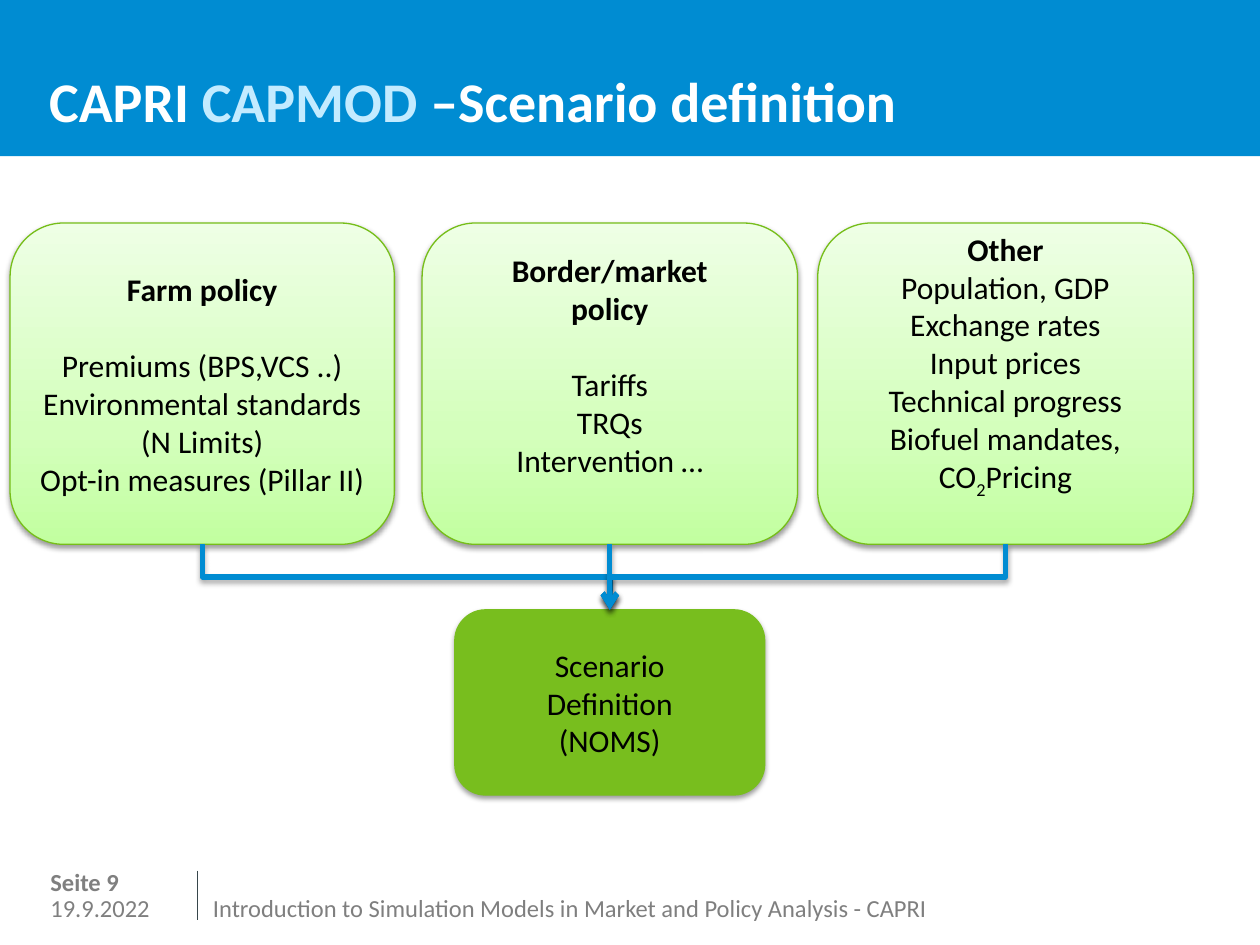
from lxml import etree
from pptx import Presentation
from pptx.dml.color import RGBColor
from pptx.enum.shapes import MSO_CONNECTOR, MSO_SHAPE
from pptx.enum.text import MSO_ANCHOR, PP_ALIGN
from pptx.oxml import parse_xml
from pptx.oxml.ns import nsdecls, qn
from pptx.util import Inches, Pt

ELBOW, STRAIGHT = MSO_CONNECTOR.ELBOW, MSO_CONNECTOR.STRAIGHT
RECT, ROUNDED = MSO_SHAPE.RECTANGLE, MSO_SHAPE.ROUNDED_RECTANGLE
TOP, MIDDLE, BOTTOM = MSO_ANCHOR.TOP, MSO_ANCHOR.MIDDLE, MSO_ANCHOR.BOTTOM
CENTER = PP_ALIGN.CENTER

THEME = {
    "font": "Calibri", "title": 32, "body": 18, "footer": 14,
    "blue": "008CD2", "pale_blue": "C3EBFF", "white": "FFFFFF", "black": "000000",
    "gray": "7F7F7F", "rule": "37464B", "green": "78BE1E", "edge": "76BE19",
    "gradient": [(0, "C2FFA0"), (35, "D4FFBC"), (100, "EEFFE5")],
}

# Content
TITLE = [("CAPRI ", "white"), ("CAPMOD", "pale_blue"), (" –Scenario definition", "white")]
# left, width, gap after heading (pt), bottom inset, heading, lines
POLICIES = [
    (0.08, 3.05, 22, 0.05, "Farm policy",
     ["Premiums (BPS,VCS ..)", "Environmental standards (N Limits)",
      "Opt-in measures (Pillar II)"]),
    (3.35, 2.98, 22, 0.35, "Border/market\vpolicy",
     ["Tariffs", "TRQs", "Intervention …"]),
    (6.49, 2.98, 0, 0.35, "Other",
     ["Population, GDP", "Exchange rates", "Input prices", "Technical progress",
      "Biofuel mandates, CO|2|Pricing"]),  # bars enclose a subscript
]
SCENARIO = ["Scenario", "Definition", "(NOMS)"]
FOOTER = [  # left, top, width, height, text, bold
    (0.4, 7.09, 1.06, 0.28, "19.9.2022", False),
    (0.4, 6.88, 1.06, 0.2, "Seite 9", True),
    (1.69, 7.09, 6.63, 0.3,
     "Introduction to Simulation Models in Market and Policy Analysis - CAPRI", False),
]
ROW_TOP, ROW_HEIGHT = 1.77, 2.55
SCENARIO_BOX = (3.61, 4.84, 2.46, 1.47)


def rgb(name):
    return RGBColor.from_string(THEME[name])


def style(font, size, color, bold=False):
    font.name, font.size, font.bold = THEME["font"], Pt(THEME[size]), bold
    font.color.rgb = rgb(color)


def add_text(slide, box, runs, size, bold, anchor=TOP):
    tf = slide.shapes.add_textbox(*map(Inches, box)).text_frame
    tf.word_wrap, tf.vertical_anchor = True, anchor
    tf.margin_left = tf.margin_top = tf.margin_right = tf.margin_bottom = 0
    p = tf.paragraphs[0]
    for text, color in runs:
        r = p.add_run()
        r.text = text
        style(r.font, size, color, bold)
    return p


def set_shadow(s, alpha, distance):
    """Soft shadow straight below the shape or connector."""
    sp_pr = s._element.spPr
    effects = sp_pr.find(qn("a:effectLst"))
    if effects is None:
        effects = etree.SubElement(sp_pr, qn("a:effectLst"))
    effects.append(parse_xml(
        f'<a:outerShdw {nsdecls("a")} blurRad="{Pt(3.1)}" dist="{Pt(distance)}" '
        f'dir="5400000" rotWithShape="0"><a:srgbClr val="{THEME["black"]}">'
        f'<a:alpha val="{alpha * 1000}"/></a:srgbClr></a:outerShdw>'))


def set_gradient(s):
    stops = "".join(f'<a:gs pos="{pos * 1000}"><a:srgbClr val="{color}"/></a:gs>'
                    for pos, color in THEME["gradient"])
    fill = s._element.spPr.find(qn("a:solidFill"))
    fill.getparent().replace(fill, parse_xml(
        f'<a:gradFill {nsdecls("a")} rotWithShape="1"><a:gsLst>{stops}</a:gsLst>'
        '<a:lin ang="16200000" scaled="0"/></a:gradFill>'))


def add_box(slide, box, lines, edge, bottom=0.05):
    s = slide.shapes.add_shape(ROUNDED, *map(Inches, box))
    s.fill.solid()
    s.fill.fore_color.rgb = rgb("green")
    s.line.color.rgb, s.line.width = rgb(edge), Pt(0.75)
    s.shadow.inherit = False
    set_shadow(s, 38, 1.6)
    tf = s.text_frame
    tf.word_wrap, tf.vertical_anchor = True, MIDDLE
    tf.margin_bottom = Inches(bottom)
    for i, line in enumerate(lines):
        p = tf.paragraphs[0] if i == 0 else tf.add_paragraph()
        p.alignment = CENTER
        for j, part in enumerate(line.split("|")):
            if j == 0:
                p.text = part
                r = p.runs[0]
            else:
                r = p.add_run()
                r.text = part
            if j % 2:
                r.font._element.set("baseline", "-25000")
        for r in p.runs:
            style(r.font, "body", "black")
    return s


def join(slide, source, target):
    """Arrow from the bottom of source to the top of target."""
    x1, y1 = source.left + source.width // 2, source.top + source.height
    x2, y2 = target.left + target.width // 2, target.top
    straight = abs(x2 - x1) < Inches(0.02)
    line = slide.shapes.add_connector(STRAIGHT if straight else ELBOW, x1, y1, x2, y2)
    line.begin_connect(source, 2)
    line.end_connect(target, 0)
    line.line.color.rgb, line.line.width = rgb("blue"), Pt(3)
    etree.SubElement(line.line._get_or_add_ln(), qn("a:tailEnd"), type="arrow")
    set_shadow(line, 35, 1.8)
    if not straight:
        # A vertical-first elbow is a horizontal one turned by a quarter
        drop, span = y2 - y1, abs(x2 - x1)
        line.left, line.top = (x1 + x2 - drop) // 2, (y1 + y2 - span) // 2
        line.width, line.height = drop, span
        xfrm = line._element.spPr.find(qn("a:xfrm"))
        xfrm.set("rot", str((270 if x2 > x1 else 90) * 60000))
        xfrm.set("flipH", "1" if x2 > x1 else "0")
        xfrm.set("flipV", "0")


def main():
    prs = Presentation()
    prs.slide_width, prs.slide_height = Inches(10), Inches(7.5)
    slide = prs.slides.add_slide(prs.slide_layouts[6])

    # Footer
    for *box, text, bold in FOOTER:
        add_text(slide, box, [(text, "gray")], "footer", bold)
    rule = slide.shapes.add_connector(
        STRAIGHT, Inches(1.57), Inches(6.91), Inches(1.57), Inches(7.3))
    rule.line.color.rgb, rule.line.width = rgb("rule"), Pt(0.75)
    etree.SubElement(rule._element.spPr, qn("a:effectLst"))

    # Header band and title
    band = slide.shapes.add_shape(RECT, 0, 0, prs.slide_width, Inches(1.24))
    band.fill.solid()
    band.fill.fore_color.rgb = rgb("blue")
    band.line.fill.background()
    band.shadow.inherit = False
    title = add_text(slide, (0.39, 0, 9.21, 1.06), TITLE, "title", True, BOTTOM)
    title.line_spacing = Pt(35)

    # Policy boxes feeding the scenario definition
    scenario = add_box(slide, SCENARIO_BOX, SCENARIO, "green")
    for left, width, gap, bottom, heading, lines in POLICIES:
        policy = add_box(slide, (left, ROW_TOP, width, ROW_HEIGHT),
                         [heading] + lines, "edge", bottom)
        set_gradient(policy)
        head = policy.text_frame.paragraphs[0]
        head.space_after = Pt(gap)
        for r in head.runs:
            r.font.bold = True
        join(slide, policy, scenario)

    prs.save("out.pptx")


if __name__ == "__main__":
    main()
